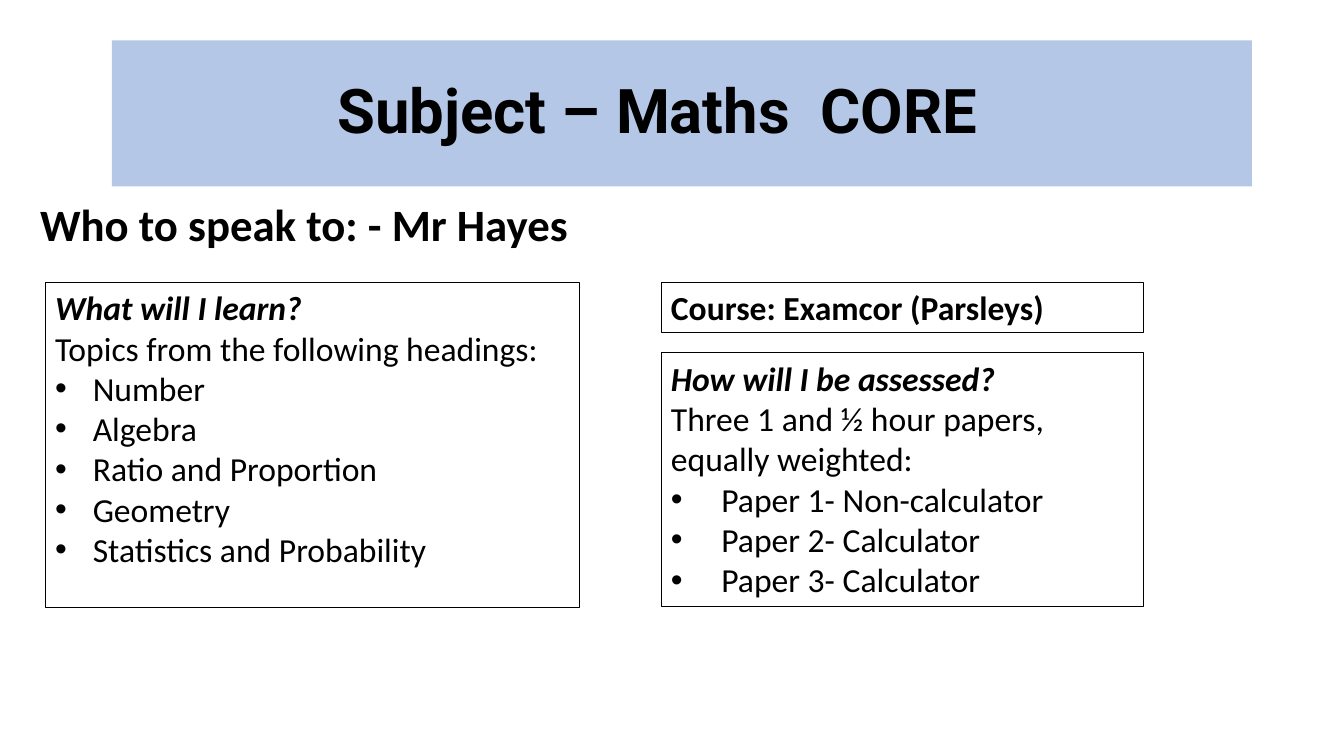
from lxml.etree import SubElement
from pptx import Presentation
from pptx.dml.color import RGBColor
from pptx.enum.shapes import MSO_SHAPE as Preset
from pptx.enum.text import MSO_ANCHOR as Anchor, PP_ALIGN as Align
from pptx.oxml.ns import qn
from pptx.util import Cm, Pt

COLOURS = {"banner": "B4C7E7", "ink": "000000"}
LEFT_X, RIGHT_X, PANELS_Y = 1.14, 16.66, 7.11
RIGHT_WIDTH = 12.17


def colour(name):
    return RGBColor.from_string(COLOURS[name])


def style(paragraph, size, font="Calibri", bold=False, italic=False):
    paragraph.font.name = font
    paragraph.font.size = Pt(size)
    paragraph.font.bold = bold
    paragraph.font.italic = italic
    paragraph.font.color.rgb = colour("ink")


def add_bullet(paragraph, indent):
    properties = paragraph._p.get_or_add_pPr()
    properties.set("marL", str(Cm(indent)))
    properties.set("indent", str(-Cm(indent)))
    SubElement(properties, qn("a:buFont"), typeface="Arial")
    SubElement(properties, qn("a:buChar"), char="•")


def add_rectangle(slide, box):
    rectangle = slide.shapes.add_shape(Preset.RECTANGLE, *map(Cm, box))
    rectangle.shadow.inherit = False
    rectangle.text_frame.word_wrap = True
    return rectangle


def add_banner(slide, box, title):
    banner = add_rectangle(slide, box)
    banner.fill.solid()
    banner.fill.fore_color.rgb = colour("banner")
    banner.line.fill.background()
    frame = banner.text_frame
    frame.vertical_anchor = Anchor.MIDDLE
    frame.margin_right = Cm(1.46)  # sets the title left of centre
    frame.text = title
    heading = frame.paragraphs[0]
    heading.alignment = Align.CENTER
    heading.line_spacing = 0.9
    style(heading, 44, font="Roboto", bold=True)


def add_contact(slide, box, contact):
    frame = slide.shapes.add_textbox(*map(Cm, box)).text_frame
    frame.word_wrap = True
    frame.vertical_anchor = Anchor.BOTTOM
    frame.text = contact
    frame.paragraphs[0].line_spacing = 0.9
    style(frame.paragraphs[0], 32, bold=True)


def add_panel(slide, box, heading, intro=None, topics=(), indent=0):
    """Outlined box with a bold heading, which is italic above an intro and its bullets."""
    panel = add_rectangle(slide, box)
    panel.fill.background()
    panel.line.color.rgb = colour("ink")
    panel.line.width = Pt(0.75)
    frame = panel.text_frame
    frame.vertical_anchor = Anchor.TOP
    lines = [heading, intro, *topics] if intro else [heading]
    frame.text = "\n".join(lines)
    for number, paragraph in enumerate(frame.paragraphs):
        paragraph.alignment = Align.LEFT
        if number > 1:
            add_bullet(paragraph, indent)
        is_heading = number == 0
        style(paragraph, 24, bold=is_heading, italic=is_heading and intro is not None)


def add_subject_slide(deck):
    slide = deck.slides.add_slide(deck.slide_layouts[6])
    add_banner(slide, (2.82, 1.02, 28.73, 3.68), "Subject – Maths  CORE")
    add_contact(slide, (0.76, 4.17, 14.07, 2.29), "Who to speak to: - Mr Hayes")
    add_panel(slide, (RIGHT_X, 8.89, RIGHT_WIDTH, 6.4), "How will I be assessed?",
              "Three 1 and ½ hour papers, equally weighted:",
              ["Paper 1- Non-calculator", "Paper 2- Calculator", "Paper 3- Calculator"],
              indent=1.27)
    add_panel(slide, (LEFT_X, PANELS_Y, 13.46, 8.2), "What will I learn?",
              "Topics from the following headings:",
              ["Number", "Algebra", "Ratio and Proportion", "Geometry",
               "Statistics and Probability"],
              indent=0.95)
    add_panel(slide, (RIGHT_X, PANELS_Y, RIGHT_WIDTH, 1.27), "Course: Examcor (Parsleys)")


def main():
    deck = Presentation()
    deck.slide_width, deck.slide_height = Cm(33.87), Cm(19.05)
    add_subject_slide(deck)
    deck.save("out.pptx")


if __name__ == "__main__":
    main()
